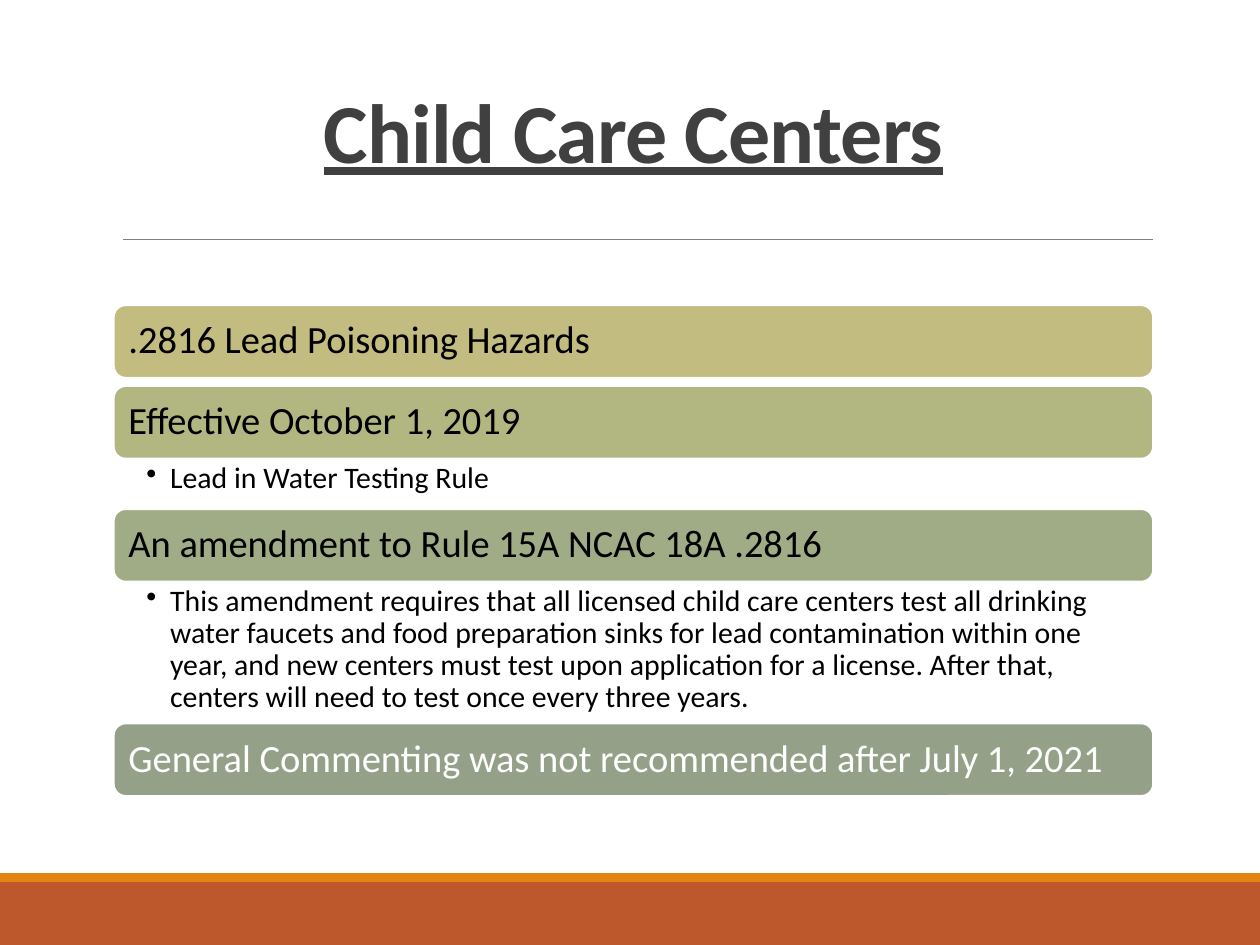
from dataclasses import dataclass

from lxml import etree
from pptx import Presentation
from pptx.dml.color import RGBColor
from pptx.enum.shapes import MSO_CONNECTOR, MSO_SHAPE
from pptx.enum.text import MSO_ANCHOR, MSO_AUTO_SIZE, PP_ALIGN
from pptx.oxml.ns import qn
from pptx.util import Cm, Pt

RECTANGLE = MSO_SHAPE.RECTANGLE
ROUNDED_RECTANGLE = MSO_SHAPE.ROUNDED_RECTANGLE
STRAIGHT = MSO_CONNECTOR.STRAIGHT
MIDDLE, BOTTOM = MSO_ANCHOR.MIDDLE, MSO_ANCHOR.BOTTOM
LEFT, CENTER = PP_ALIGN.LEFT, PP_ALIGN.CENTER


@dataclass(frozen=True)
class Theme:
    font: str = "Calibri"
    title_size: float = 48
    bar_size: float = 22
    detail_size: float = 17
    title: str = "404040"
    black: str = "000000"
    white: str = "FFFFFF"
    rule: str = "808080"
    footer: str = "BD582C"
    footer_edge: str = "E48312"
    bars: tuple = ("C2BC80", "B2B782", "A0AC85", "94A088")


theme = Theme()


def add_box(kind, left, top, width, height, color):
    """Add a filled preset shape without outline or shadow; lengths in cm."""
    shape = slide.shapes.add_shape(kind, Cm(left), Cm(top), Cm(width), Cm(height))
    shape.shadow.inherit = False
    shape.fill.solid()
    shape.fill.fore_color.rgb = RGBColor.from_string(color)
    shape.line.fill.background()
    return shape


def write(frame, text, size, color, alignment, line_spacing):
    """Put one formatted paragraph into a text frame and return it."""
    frame.word_wrap = True
    paragraph = frame.paragraphs[0]
    paragraph.text = text
    paragraph.alignment = alignment
    paragraph.line_spacing = line_spacing
    paragraph.font.name = theme.font
    paragraph.font.size = Pt(size)
    paragraph.font.color.rgb = RGBColor.from_string(color)
    return paragraph


presentation = Presentation()
presentation.slide_width = Cm(25.4)
presentation.slide_height = Cm(19.05)
slide = presentation.slides.add_slide(presentation.slide_layouts[5])

# Footer band
add_box(RECTANGLE, 0, 17.78, 25.4, 1.27, theme.footer)
add_box(RECTANGLE, 0, 17.6, 25.4, 0.18, theme.footer_edge)

# Title and the rule below it
title = slide.shapes.title
title.left, title.top, title.width, title.height = Cm(2.29), Cm(1.27), Cm(20.96), Cm(2.49)
title.text_frame.auto_size = MSO_AUTO_SIZE.NONE
title.text_frame.vertical_anchor = BOTTOM
heading = write(title.text_frame, "Child Care Centers", theme.title_size, theme.title, CENTER, 0.85)
heading.font.bold = True
heading.font.underline = True
heading.runs[0].font._element.set("spc", "-50")

rule = slide.shapes.add_connector(STRAIGHT, Cm(2.48), Cm(4.82), Cm(23.24), Cm(4.82))
rule.line.color.rgb = RGBColor.from_string(theme.rule)
rule.line.width = Pt(0.5)
etree.SubElement(rule._element.spPr, qn("a:effectLst"))

# Stacked bars: heading, heading colour, detail below it, space to the next bar
sections = [
    (".2816 Lead Poisoning Hazards", theme.black, None, 0.16),
    ("Effective October 1, 2019", theme.black, "Lead in Water Testing Rule", 1.01),
    (
        "An amendment to Rule 15A NCAC 18A .2816",
        theme.black,
        "This amendment requires that all licensed child care centers test all drinking "
        "water faucets and food preparation sinks for lead contamination within one year, "
        "and new centers must test upon application for a license. After that, centers "
        "will need to test once every three years.",
        2.85,
    ),
    ("General Commenting was not recommended after July 1, 2021", theme.white, None, 0),
]
stack_left, stack_width, bar_height = 2.29, 20.96, 1.47
top = 6.15

for (text, text_color, detail, space), bar_color in zip(sections, theme.bars):
    bar = add_box(ROUNDED_RECTANGLE, stack_left, top, stack_width, bar_height, bar_color)
    bar.line.color.rgb = RGBColor.from_string(theme.white)
    bar.line.width = Pt(1.25)
    frame = bar.text_frame
    frame.vertical_anchor = MIDDLE
    frame.margin_left = frame.margin_right = Cm(0.23)
    frame.margin_top = frame.margin_bottom = Cm(0.1)
    write(frame, text, theme.bar_size, text_color, LEFT, 0.9)
    top += bar_height

    if detail:
        box = slide.shapes.add_textbox(Cm(stack_left), Cm(top), Cm(stack_width), Cm(space))
        frame = box.text_frame
        frame.margin_left, frame.margin_right = Cm(0.66), Cm(0.43)
        frame.margin_top = frame.margin_bottom = Cm(0.08)
        paragraph = write(frame, detail, theme.detail_size, theme.black, LEFT, 0.9)
        properties = paragraph._p.get_or_add_pPr()
        properties.set("marL", str(Cm(0.48)))
        properties.set("indent", str(-Cm(0.48)))
        bullet = etree.Element(qn("a:buChar"), char="•")
        properties.find(qn("a:lnSpc")).addnext(bullet)
    top += space

presentation.save("out.pptx")
